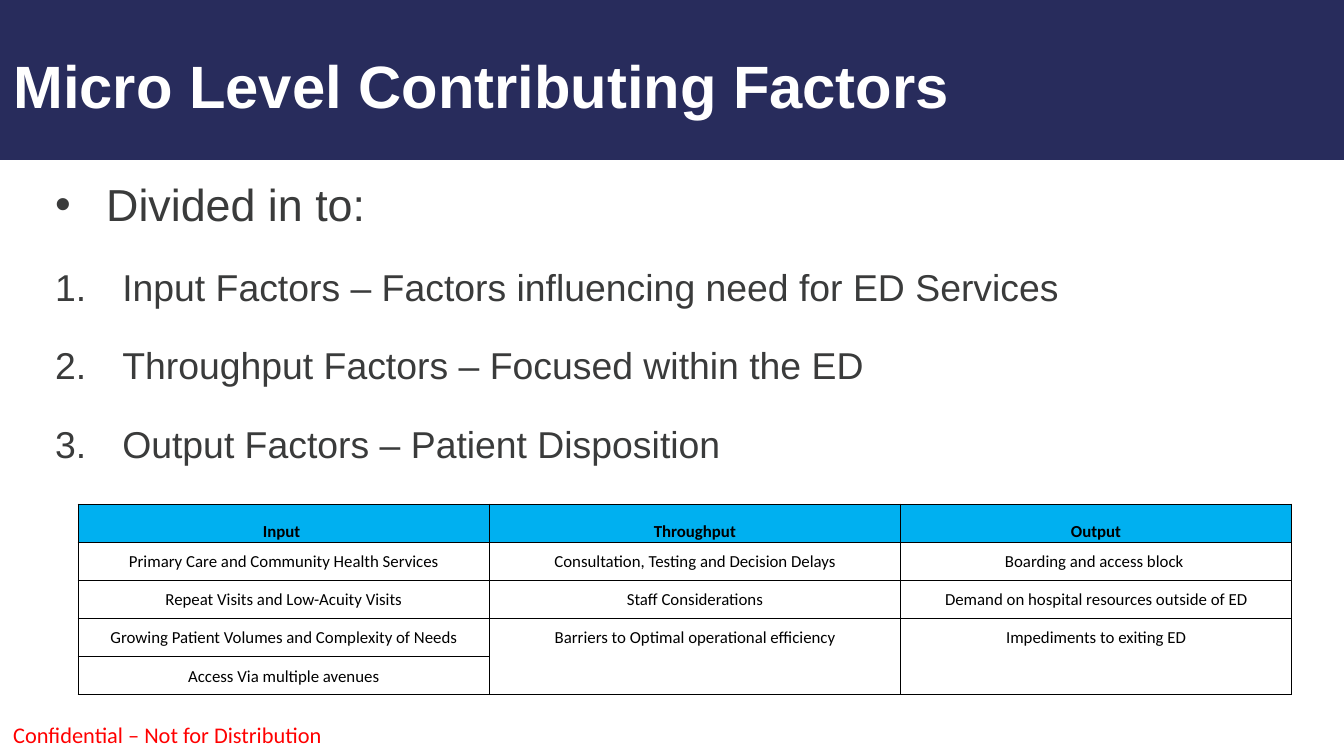
import pptx
import pptx.util
import pptx.dml.color
import pptx.enum.shapes
import pptx.enum.text
import pptx.oxml.ns
from lxml import etree

Inches, Pt = pptx.util.Inches, pptx.util.Pt
RGBColor = pptx.dml.color.RGBColor
MSO_ANCHOR = pptx.enum.text.MSO_ANCHOR
PP_ALIGN = pptx.enum.text.PP_ALIGN
qn = pptx.oxml.ns.qn

# Content
TITLE = "Micro Level Contributing Factors"
INTRO = "Divided in to:"
FACTORS = [
    "Input Factors – Factors influencing need for ED Services",
    "Throughput Factors – Focused within the ED",
    "Output Factors – Patient Disposition",
]
TABLE_ROWS = [
    ("Input ", "Throughput", "Output"),
    ("Primary Care and Community Health Services",
     "Consultation, Testing and Decision Delays", "Boarding and access block "),
    ("Repeat Visits and Low-Acuity Visits", "Staff Considerations",
     "Demand on hospital resources outside of ED"),
    ("Growing Patient Volumes and Complexity of Needs",
     "Barriers to Optimal operational efficiency", "Impediments to exiting ED"),
    ("Access Via multiple avenues", "", ""),
]
COLUMN_WIDTHS = (3.06, 3.06, 2.91)
TABLE_HEIGHT = 1.42
FOOTER = "Confidential – Not for Distribution"

# Colours
NAVY = RGBColor(0x28, 0x2C, 0x5C)
CHARCOAL = RGBColor(0x3A, 0x3B, 0x3B)
SKY = RGBColor(0x00, 0xB0, 0xF0)
RED = RGBColor(0xFF, 0x00, 0x00)
BLACK = RGBColor(0x00, 0x00, 0x00)
WHITE = RGBColor(0xFF, 0xFF, 0xFF)


def add_run(paragraph, text, size, color, font="Arial", bold=False):
    run = paragraph.add_run()
    run.text = text
    run.font.name, run.font.size, run.font.bold = font, Pt(size), bold
    run.font.color.rgb = color


def place(shape, left, top, width, height):
    shape.left, shape.top = Inches(left), Inches(top)
    shape.width, shape.height = Inches(width), Inches(height)
    frame = shape.text_frame
    frame.word_wrap = True
    frame.auto_size = pptx.enum.text.MSO_AUTO_SIZE.NONE
    frame.vertical_anchor = MSO_ANCHOR.TOP
    return frame


def set_bullet(paragraph, indent, tag, **attributes):
    properties = paragraph._p.get_or_add_pPr()
    properties.set("marL", str(Inches(indent)))
    properties.set("indent", str(-Inches(indent)))
    font = etree.SubElement(properties, qn("a:buFont"))
    font.set("typeface", "Arial")
    etree.SubElement(properties, qn(tag), attributes)


def set_border(cell, side, visible):
    properties = cell._tc.get_or_add_tcPr()
    line = etree.SubElement(properties, qn("a:ln" + side), w=str(Pt(0.5)))
    if visible:
        fill = etree.SubElement(line, qn("a:solidFill"))
        etree.SubElement(fill, qn("a:srgbClr"), val=str(BLACK))
    else:
        etree.SubElement(line, qn("a:noFill"))


# Widescreen slide, 16 by 9
presentation = pptx.Presentation()
presentation.slide_width = Inches(10)
presentation.slide_height = presentation.slide_width * 9 // 16
slide = presentation.slides.add_slide(presentation.slide_layouts[1])

# Banner, behind everything else
banner = slide.shapes.add_shape(
    pptx.enum.shapes.MSO_SHAPE.RECTANGLE, 0, 0, Inches(10), Inches(1.19))
banner.shadow.inherit = False
banner.fill.solid()
banner.fill.fore_color.rgb = NAVY
banner.line.fill.background()
slide.shapes._spTree.insert(2, banner._element)

# Title
paragraph = place(slide.shapes.title, 0, 0.32, 7.41, 0.47).paragraphs[0]
paragraph.alignment = PP_ALIGN.LEFT
paragraph.line_spacing = Pt(38)
add_run(paragraph, TITLE, 32, WHITE, bold=True)

# List: a bulleted lead-in, then numbered factors
frame = place(slide.placeholders[1], 0.31, 1.22, 8.76, 1.12)
for index, text in enumerate([INTRO] + FACTORS):
    paragraph = frame.add_paragraph() if index else frame.paragraphs[0]
    paragraph.line_spacing = Pt(32)
    paragraph.space_before = Pt(10 if index else 0)
    if index:
        set_bullet(paragraph, 0.5, "a:buAutoNum", type="arabicPeriod")
    else:
        set_bullet(paragraph, 0.38, "a:buChar", char="•")
    add_run(paragraph, text, 20 if index else 24, CHARCOAL)

# Factor table
table = slide.shapes.add_table(
    len(TABLE_ROWS), len(COLUMN_WIDTHS), Inches(0.58), Inches(3.75),
    Inches(sum(COLUMN_WIDTHS)), Inches(TABLE_HEIGHT)).table
table.first_row = table.horz_banding = False
for column, width in zip(table.columns, COLUMN_WIDTHS):
    column.width = Inches(width)
for row_index, texts in enumerate(TABLE_ROWS):
    header = row_index == 0
    for column_index, text in enumerate(texts):
        cell = table.cell(row_index, column_index)
        cell.margin_left = cell.margin_right = cell.margin_top = Inches(0.01)
        cell.margin_bottom = 0
        cell.vertical_anchor = MSO_ANCHOR.BOTTOM if header else MSO_ANCHOR.MIDDLE
        # An empty cell runs on from the one above, with no line between
        open_below = (row_index + 1 < len(TABLE_ROWS)
                      and not TABLE_ROWS[row_index + 1][column_index])
        hidden = {"T": not text, "B": open_below}
        for side in "LRTB":
            set_border(cell, side, not hidden.get(side, False))
        if header:
            cell.fill.solid()
            cell.fill.fore_color.rgb = SKY
        else:
            cell.fill.background()
        paragraph = cell.text_frame.paragraphs[0]
        paragraph.alignment = PP_ALIGN.CENTER
        if text:
            add_run(paragraph, text, 9, BLACK, "Calibri", header)
        else:
            etree.SubElement(paragraph._p, qn("a:endParaRPr"), sz="900")

# Footer
footer = slide.shapes.add_textbox(0, 0, 0, 0)
frame = place(footer, 0, 5.32, 2.66, 0.3)
add_run(frame.paragraphs[0], FOOTER, 12, RED, "Calibri")

presentation.save("out.pptx")
